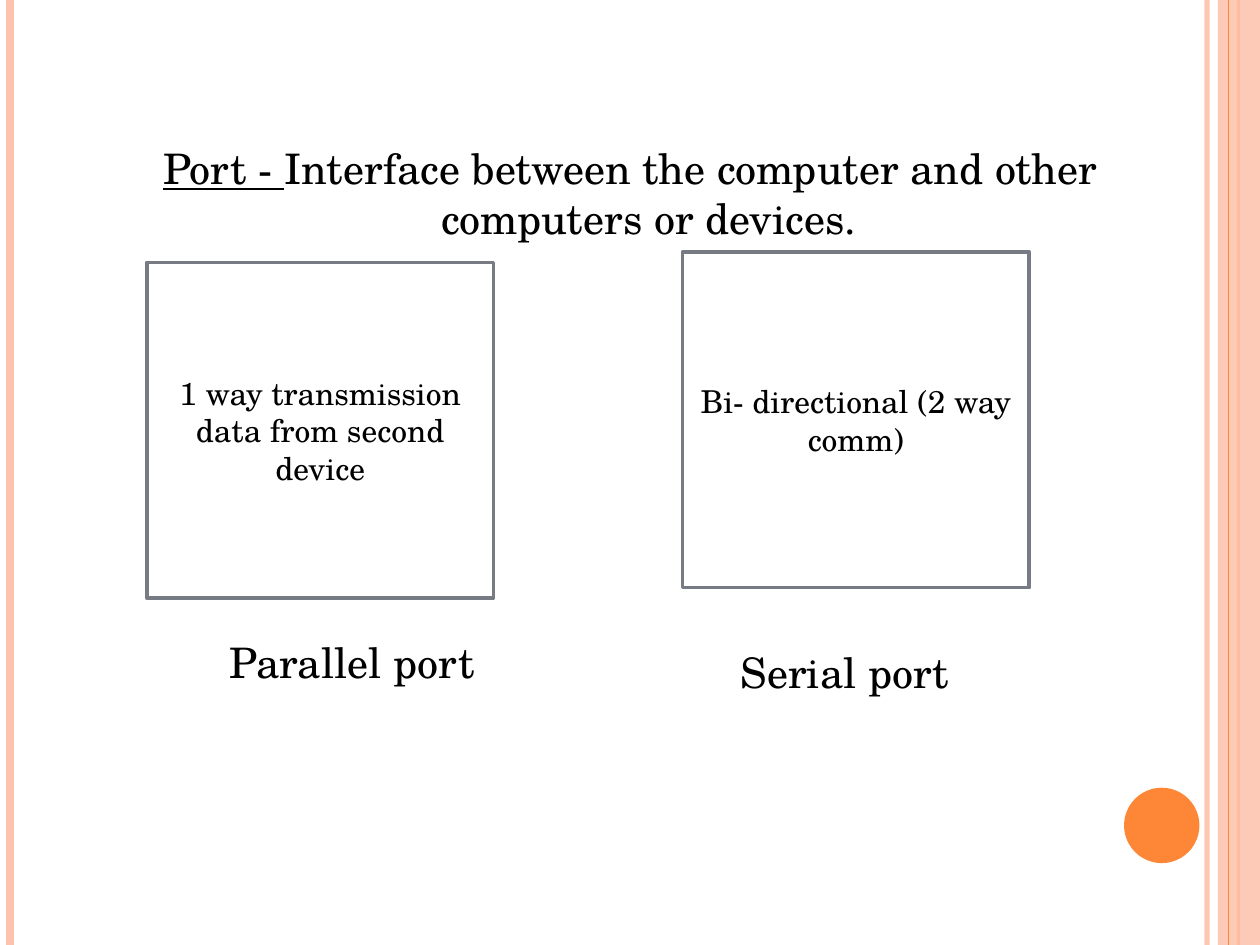
"""Build the slide on parallel and serial computer ports."""
from lxml.etree import SubElement
from pptx import Presentation
from pptx.dml.color import RGBColor
from pptx.enum.shapes import MSO_CONNECTOR as Connector, MSO_SHAPE as Shape
from pptx.enum.text import MSO_ANCHOR as Anchor, PP_ALIGN as Align
from pptx.oxml.ns import qn
from pptx.util import Cm, Pt

BLACK = RGBColor(0x00, 0x00, 0x00)
WHITE = RGBColor(0xFF, 0xFF, 0xFF)
ORANGE = RGBColor(0xFE, 0x86, 0x37)
PEACH = RGBColor(0xFE, 0xC3, 0xAE)
GREY = RGBColor(0x77, 0x7C, 0x84)
FONT = "TeX Gyre Schola"

WIDTH, HEIGHT = 25.4, 19.05
BOX_SIZE = 6.99, 6.77
LABEL_SIZE = 7.83, 1.27
HANGING = 0.76

TERM = "Port - "
DEFINITION = "Interface between the computer and other computers or devices."
PORTS = [
    {"name": "Parallel port", "name_at": (3.18, 12.7),
     "detail": "1 way transmission data from second device", "box_at": (2.96, 5.29)},
    {"name": "Serial port", "name_at": (13.12, 12.91),
     "detail": "Bi- directional (2 way comm)", "box_at": (13.76, 5.08)},
]
LEFT_STRIPES = [(24.33, PEACH, 3, 93), (0.21, PEACH, 4.5, 100), (24.97, ORANGE, 1.5, 100)]
TOP_STRIPE = (24.77, ORANGE, 0.75, 100)
BAND = (24.55, 0, 0.85, HEIGHT)
DISC = (22.66, 15.88, 1.52, 1.52)


def set_opacity(fill, percent):
    color = fill._xPr.find(".//" + qn("a:srgbClr"))
    SubElement(color, qn("a:alpha"), val=str(percent * 1000))


def add_stripe(slide, x, color, weight, opacity):
    stripe = slide.shapes.add_connector(Connector.STRAIGHT, Cm(x), 0, Cm(x), Cm(HEIGHT))
    stripe.line.color.rgb = color
    stripe.line.width = Pt(weight)
    if opacity < 100:
        set_opacity(stripe.line.fill, opacity)
    SubElement(stripe._element.spPr, qn("a:effectLst"))


def add_figure(slide, kind, place, fill, outline=None):
    figure = slide.shapes.add_shape(kind, *map(Cm, place))
    figure.shadow.inherit = False
    figure.fill.solid()
    figure.fill.fore_color.rgb = fill
    if outline is None:
        figure.line.fill.background()
    else:
        figure.line.color.rgb = outline
        figure.line.width = Pt(2)
    return figure


def add_frame(slide, place):
    return slide.shapes.add_textbox(*map(Cm, place)).text_frame


def write(frame, text, size=24, underline=False, anchor=Anchor.TOP):
    frame.word_wrap = True
    frame.vertical_anchor = anchor
    paragraph = frame.paragraphs[0]
    paragraph.alignment = Align.CENTER
    run = paragraph.add_run()
    run.text = text
    run.font.name = FONT
    run.font.size = Pt(size)
    run.font.color.rgb = BLACK
    run.font.underline = underline
    return paragraph


def main():
    deck = Presentation()
    deck.slide_width, deck.slide_height = Cm(WIDTH), Cm(HEIGHT)
    slide = deck.slides.add_slide(deck.slide_layouts[6])

    for stripe in LEFT_STRIPES:
        add_stripe(slide, *stripe)
    band = add_figure(slide, Shape.RECTANGLE, BAND, PEACH)
    set_opacity(band.fill, 87)
    add_stripe(slide, *TOP_STRIPE)
    add_figure(slide, Shape.OVAL, DISC, ORANGE)

    heading = add_frame(slide, (1.27, 2.75, 22.86, 3.18))
    write(heading, TERM, underline=True)
    sentence = write(heading, DEFINITION)
    sentence.space_before = Pt(6)
    properties = sentence._p.get_or_add_pPr()
    properties.set("marL", str(Cm(HANGING)))
    properties.set("indent", str(-Cm(HANGING)))

    for port in PORTS:
        write(add_frame(slide, port["name_at"] + LABEL_SIZE), port["name"])
    for port in PORTS:
        box = add_figure(slide, Shape.RECTANGLE, port["box_at"] + BOX_SIZE, WHITE, GREY)
        write(box.text_frame, port["detail"], size=18, anchor=Anchor.MIDDLE)

    deck.save("out.pptx")


if __name__ == "__main__":
    main()
